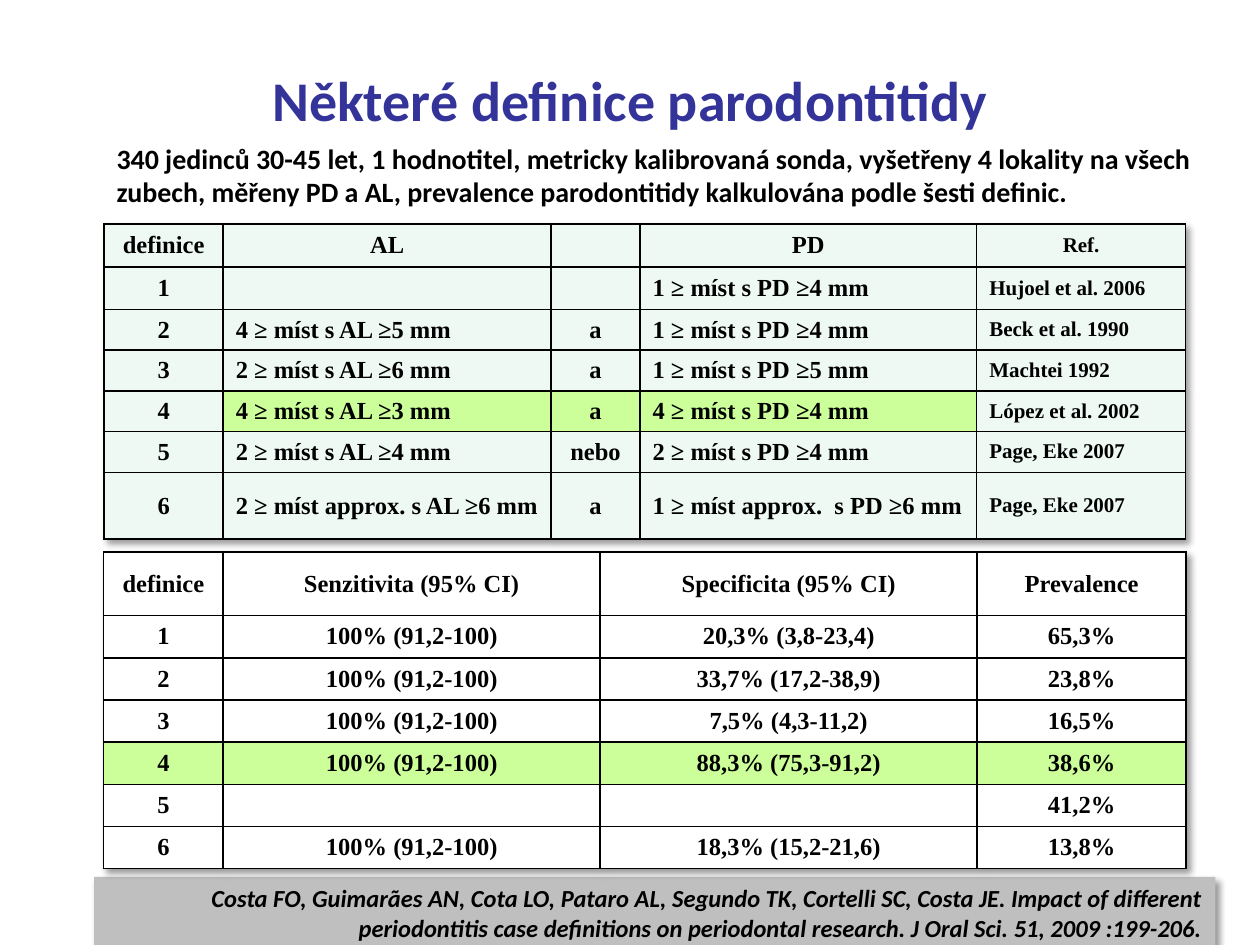
from lxml import etree
from pptx import Presentation
from pptx.dml.color import RGBColor
from pptx.enum import shapes, text
from pptx.oxml import ns
from pptx.util import Cm, Pt

TITLE = "Některé definice parodontitidy"
INTRO = (
    "340 jedinců 30-45 let, 1 hodnotitel, metricky kalibrovaná sonda, "
    "vyšetřeny 4 lokality na všech zubech, měřeny PD a AL, "
    "prevalence parodontitidy kalkulována podle šesti definic."
)
CITATION = (
    "Costa FO, Guimarães AN, Cota LO, Pataro AL, Segundo TK, Cortelli SC, Costa JE. "
    "Impact of different periodontitis case definitions on periodontal research. "
    "J Oral Sci. 51, 2009 :199-206."
)
DEFINITIONS = [
    ("definice", "AL", "", "PD", "Ref."),
    ("1", "", "", "1 ≥ míst s PD ≥4 mm", "Hujoel et al. 2006"),
    ("2", "4 ≥ míst s AL ≥5 mm", "a", "1 ≥ míst s PD ≥4 mm", "Beck et al. 1990"),
    ("3", "2 ≥ míst s AL ≥6 mm", "a", "1 ≥ míst s PD ≥5 mm", "Machtei 1992"),
    ("4", "4 ≥ míst s AL ≥3 mm", "a", "4 ≥ míst s PD ≥4 mm", "López et al. 2002"),
    ("5", "2 ≥ míst s AL ≥4 mm", "nebo", "2 ≥ míst s PD ≥4 mm", "Page, Eke 2007"),
    ("6", "2 ≥ míst approx. s AL ≥6 mm", "a", "1 ≥ míst approx.  s PD ≥6 mm", "Page, Eke 2007"),
]
RESULTS = [
    ("definice", "Senzitivita (95% CI)", "Specificita (95% CI)", "Prevalence"),
    ("1", "100% (91,2-100)", "20,3% (3,8-23,4)", "65,3%"),
    ("2", "100% (91,2-100)", "33,7% (17,2-38,9)", "23,8%"),
    ("3", "100% (91,2-100)", "7,5% (4,3-11,2)", "16,5%"),
    ("4", "100% (91,2-100)", "88,3% (75,3-91,2)", "38,6%"),
    ("5", "", "", "41,2%"),
    ("6", "100% (91,2-100)", "18,3% (15,2-21,6)", "13,8%"),
]
TABLES = [
    dict(data=DEFINITIONS, at=(2.1, 4.52), cols=(2.4, 6.61, 1.79, 6.79, 4.21),
         rows=(0.86, 0.86, 0.82, 0.82, 0.82, 0.82, 1.35), fill="EEF9F4",
         marked=(1, 2, 3), left=(1, 3, 4), small=(4,)),
    dict(data=RESULTS, at=(2.09, 11.13), cols=(2.41, 7.6, 7.6, 4.21),
         rows=(1.28,) + (0.85,) * 6, fill="FFFFFF",
         marked=(0, 1, 2, 3), left=(), small=()),
]
MARKED_ROW = 4
CELL_FONT = "Times New Roman"
ALIGN = text.PP_ALIGN
MIDDLE = text.MSO_ANCHOR.MIDDLE


def rgb(value):
    return RGBColor.from_string(value)


def write(p, words, align, color="000000", **fmt):
    p.alignment = align
    r = p.add_run()
    r.text = words
    r.font.color.rgb = rgb(color)
    for name, value in fmt.items():
        setattr(r.font, name, value)


def shadow():
    return etree.fromstring(
        f'<a:effectLst {ns.nsdecls("a")}><a:outerShdw blurRad="50800" dist="38100" '
        'dir="2700000" algn="tl" rotWithShape="0"><a:srgbClr val="000000">'
        '<a:alpha val="40000"/></a:srgbClr></a:outerShdw></a:effectLst>'
    )


def add_borders(cell):
    tcPr = cell._tc.get_or_add_tcPr()
    for i, side in enumerate(("lnL", "lnR", "lnT", "lnB")):
        tcPr.insert(i, etree.fromstring(
            f'<a:{side} {ns.nsdecls("a")} w="12700"><a:solidFill>'
            f'<a:srgbClr val="000000"/></a:solidFill></a:{side}>'
        ))


def add_table(s, data, at, cols, rows, fill, marked, left, small):
    sizes = [Cm(v) for v in (*at, sum(cols), sum(rows))]
    table = s.shapes.add_table(len(rows), len(cols), *sizes).table
    table._tbl.tblPr.insert(0, shadow())
    for col, width in zip(table.columns, cols):
        col.width = Cm(width)
    for i, (row, height) in enumerate(zip(table.rows, rows)):
        row.height = Cm(height)
        for j, (cell, words) in enumerate(zip(row.cells, data[i])):
            cell.vertical_anchor = MIDDLE
            cell.fill.solid()
            cell.fill.fore_color.rgb = rgb("CCFF99" if i == MARKED_ROW and j in marked else fill)
            add_borders(cell)
            p = cell.text_frame.paragraphs[0]
            if words:
                align = ALIGN.LEFT if i and j in left else ALIGN.CENTER
                write(p, words, align, name=CELL_FONT, size=Pt(12 if j in small else 14), bold=True)
            else:
                etree.SubElement(p._p, ns.qn("a:endParaRPr")).set("sz", "1400")


def main():
    prs = Presentation()
    prs.slide_width, prs.slide_height = Cm(25.4), Cm(19.05)
    s = prs.slides.add_slide(prs.slide_layouts[5])

    title = s.shapes.title
    title.left, title.top, title.width, title.height = Cm(1.9), Cm(0.41), Cm(21.6), Cm(3.18)
    title.text_frame.vertical_anchor = MIDDLE
    write(title.text_frame.paragraphs[0], TITLE, ALIGN.CENTER, "333399",
          name="Calibri", size=Pt(32), bold=True)

    add_table(s, **TABLES[0])

    sp = s.shapes.add_shape(shapes.MSO_SHAPE.RECTANGLE, Cm(1.9), Cm(17.68), Cm(22.6), Cm(1.45))
    sp.fill.solid()
    sp.fill.fore_color.rgb = rgb("BFBFBF")
    sp.line.fill.background()
    sp._element.spPr.append(shadow())
    sp.text_frame.word_wrap = True
    sp.text_frame.vertical_anchor = text.MSO_ANCHOR.TOP
    write(sp.text_frame.paragraphs[0], CITATION, ALIGN.RIGHT,
          name="Calibri", size=Pt(14), bold=True, italic=True)

    tf = s.shapes.add_textbox(Cm(2.1), Cm(2.72), Cm(22.4), Cm(1.63)).text_frame
    tf.word_wrap = True
    write(tf.paragraphs[0], INTRO, ALIGN.LEFT, name="Calibri", size=Pt(16), bold=True)

    add_table(s, **TABLES[1])
    prs.save("out.pptx")


if __name__ == "__main__":
    main()
